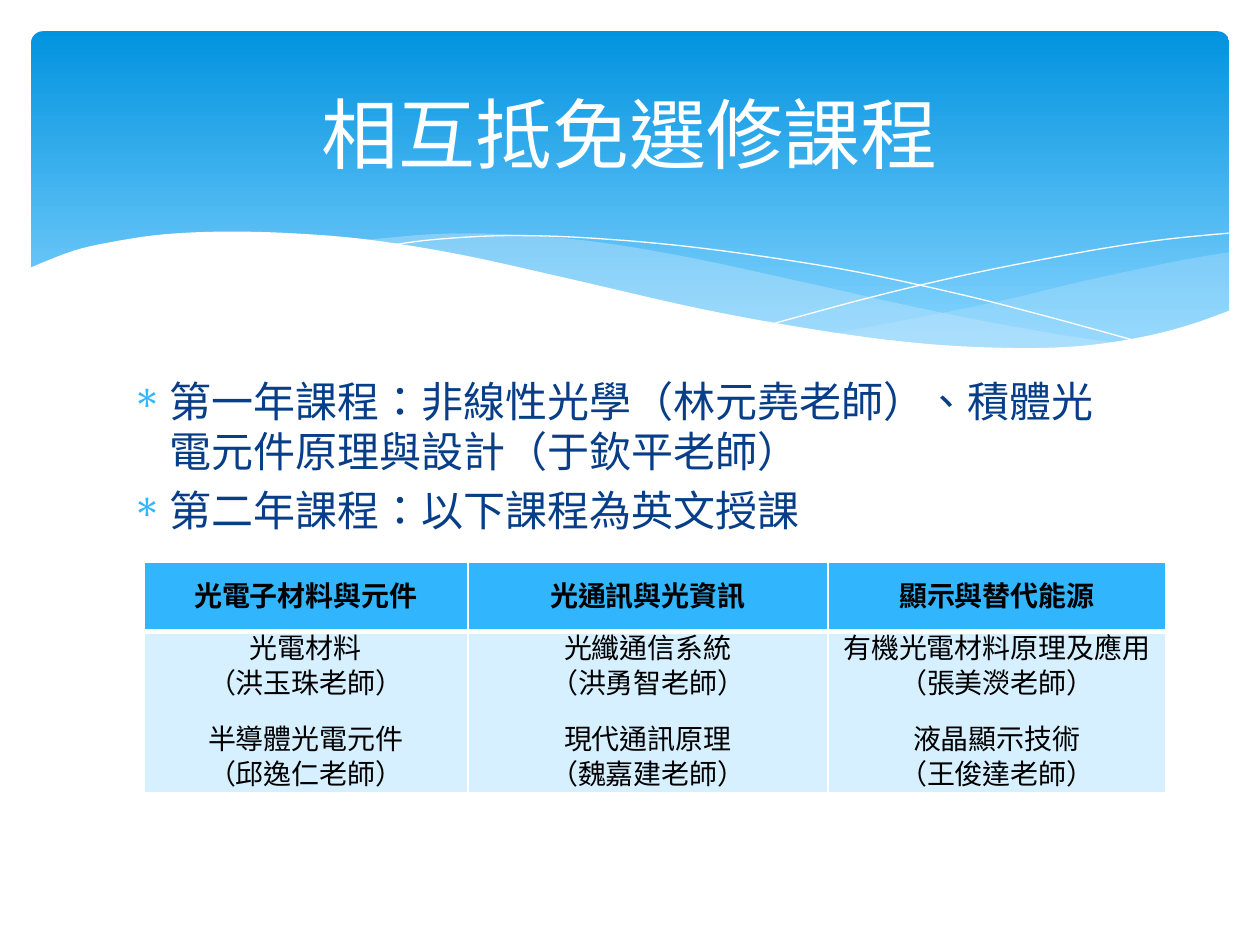
"""Build a slide on mutually creditable elective courses, with a wave banner and a course table."""
from collections import namedtuple
from lxml import etree
from pptx import Presentation
from pptx.dml.color import RGBColor
from pptx.enum.lang import MSO_LANGUAGE_ID
from pptx.enum.shapes import MSO_SHAPE
from pptx.enum.text import MSO_ANCHOR, PP_ALIGN
from pptx.oxml.ns import qn
from pptx.util import Cm, Pt

ROUNDED = MSO_SHAPE.ROUNDED_RECTANGLE
MIDDLE, TOP = MSO_ANCHOR.MIDDLE, MSO_ANCHOR.TOP
CENTER = PP_ALIGN.CENTER
CHINESE = MSO_LANGUAGE_ID.TRADITIONAL_CHINESE

Theme = namedtuple("Theme", "font white black navy accent pale wave sky_top sky_bottom title body cell")
theme = Theme("Calibri", "FFFFFF", "000000", "073E87", "31B6FD", "D6F0FF", "C6E7FC",
              "0293E0", "83D3FE", 44, 24, 16)


def smooth(points, steps=6):
    """Return points on a Catmull-Rom curve through the given points."""
    padded = [points[0], *points, points[-1]]
    curve = [points[0]]
    for a, b, c, d in zip(padded, padded[1:], padded[2:], padded[3:]):
        for step in range(1, steps + 1):
            t = step / steps
            curve.append(tuple(
                (2 * q + (r - p) * t + (2 * p - 5 * q + 4 * r - s) * t ** 2
                 + (3 * q - p - 3 * r + s) * t ** 3) / 2
                for p, q, r, s in zip(a, b, c, d)))
    return curve


def add_span(para, text, size, color, bold=False):
    """Add one formatted run to a paragraph."""
    span = para.add_run()
    span.text = text
    span.font.name = theme.font
    span.font.size = Pt(size)
    span.font.bold = bold
    span.font.color.rgb = RGBColor.from_string(color)
    span.font.language_id = CHINESE


deck = Presentation()
deck.slide_width, deck.slide_height = Cm(25.4), Cm(19.05)
page = deck.slides.add_slide(deck.slide_layouts[5])

banner = page.shapes.add_shape(ROUNDED, Cm(0.63), Cm(0.63), Cm(24.15), Cm(6.86))
banner.shadow.inherit = False
banner.adjustments[0] = 0.034
banner.line.fill.background()
banner.fill.gradient()
banner.fill.gradient_angle = 270
for stop, position, color in zip(banner.fill.gradient_stops, (0, 0.9), (theme.sky_top, theme.sky_bottom)):
    stop.position = position
    stop.color.rgb = RGBColor.from_string(color)

right_wave = smooth([(24.79, 5.08), (23.75, 5.26), (21.87, 5.66), (19.79, 6.15), (16.79, 6.73)]) + smooth(
    [(16.79, 6.73), (18.26, 6.91), (19.84, 7.04), (21.44, 7.04), (22.78, 6.86), (23.93, 6.58), (24.79, 6.27)])
middle_wave = smooth(
    [(7.26, 4.85), (8.74, 4.72), (10.13, 4.72), (11.81, 4.85), (13.74, 5.16), (15.98, 5.64),
     (18.82, 6.27), (21.26, 6.73), (22.68, 6.93)]) + smooth(
    [(22.68, 6.93), (21.54, 7.04), (20.22, 7.06), (18.69, 6.99), (16.89, 6.76), (14.83, 6.4),
     (12.47, 5.89), (10.26, 5.36), (8.69, 5.05), (7.26, 4.85)])
falling_line = smooth(
    [(7.85, 4.95), (8.74, 4.83), (10.19, 4.75), (11.91, 4.8), (14.12, 5), (16.89, 5.41),
     (19.3, 5.92), (21.11, 6.38), (23.04, 6.91)])
rising_line = smooth(
    [(15.57, 6.53), (17.65, 5.97), (19.71, 5.49), (22, 5.05), (23.47, 4.83), (24.77, 4.7)])
white_wave = smooth(
    [(24.82, 6.25), (23.88, 6.58), (22.83, 6.83), (21.59, 6.99), (20.14, 7.01), (18.44, 6.91),
     (16.46, 6.65), (14.1, 6.22), (11.35, 5.59), (9.27, 5.13), (7.42, 4.83), (5.84, 4.7),
     (4.5, 4.67), (3.35, 4.72), (2.41, 4.85), (1.5, 5.05), (0.58, 5.41)]) + [(0.58, 8.36), (24.82, 8.36)]

for outline, fill, opacity in (
        (right_wave, theme.wave, 29), (middle_wave, theme.wave, 40),
        (falling_line, None, 100), (rising_line, None, 100), (white_wave, theme.white, 100)):
    corners = [(Cm(x), Cm(y)) for x, y in outline]
    builder = page.shapes.build_freeform(*corners[0])
    builder.add_line_segments(corners[1:], close=fill is not None)
    wave = builder.convert_to_shape()
    wave.shadow.inherit = False
    if fill is None:
        wave.fill.background()
        wave.line.color.rgb = RGBColor.from_string(theme.white)
        wave.line.width = Pt(0)
        continue
    wave.line.fill.background()
    wave.fill.solid()
    wave.fill.fore_color.rgb = RGBColor.from_string(fill)
    if opacity < 100:
        tint = wave.fill._xPr.find(".//" + qn("a:srgbClr"))
        etree.SubElement(tint, qn("a:alpha")).set("val", str(opacity * 1000))

title = page.shapes.title
title.left, title.top, title.width, title.height = Cm(1.27), Cm(0.94), Cm(22.86), Cm(3.48)
title.text_frame.vertical_anchor = MIDDLE
title.text_frame.paragraphs[0].alignment = CENTER
add_span(title.text_frame.paragraphs[0], "相互抵免選修課程", theme.title, theme.white)
title._element.getparent().append(title._element)

box = page.shapes.add_textbox(Cm(2.41), Cm(7.44), Cm(20.57), Cm(9.58))
box.text_frame.word_wrap = True
for index, text in enumerate((
        "第一年課程：非線性光學（林元堯老師）、積體光電元件原理與設計（于欽平老師）",
        "第二年課程：以下課程為英文授課")):
    para = box.text_frame.add_paragraph() if index else box.text_frame.paragraphs[0]
    para.space_before = Pt(theme.body * 0.2)
    layout = para._p.get_or_add_pPr()
    layout.set("marL", str(Cm(0.76)))
    layout.set("indent", str(-Cm(0.76)))
    bullet_color = etree.SubElement(layout, qn("a:buClr"))
    etree.SubElement(bullet_color, qn("a:srgbClr")).set("val", theme.accent)
    etree.SubElement(layout, qn("a:buChar")).set("char", "∗")
    add_span(para, text, theme.body, theme.navy)

courses = (
    ("光電子材料與元件", ("光電材料", "（洪玉珠老師）", "半導體光電元件", "（邱逸仁老師）")),
    ("光通訊與光資訊", ("光纖通信系統", "（洪勇智老師）", "現代通訊原理", "（魏嘉建老師）")),
    ("顯示與替代能源", ("有機光電材料原理及應用", "（張美濙老師）", "液晶顯示技術", "（王俊達老師）")))
table = page.shapes.add_table(2, 3, Cm(2.9), Cm(11.33), Cm(20.6), Cm(4.65)).table
for column, width in zip(table.columns, (6.53, 7.26, 6.81)):
    column.width = Cm(width)
for row, height in zip(table.rows, (1.4, 3.25)):
    row.height = Cm(height)

for column, (field, lines) in enumerate(courses):
    for row, texts in enumerate(((field,), lines)):
        header = row == 0
        cell = table.cell(row, column)
        cell.margin_left = cell.margin_right = Cm(0.18)
        cell.margin_top = cell.margin_bottom = 0
        cell.vertical_anchor = MIDDLE if header else TOP
        for index, text in enumerate(texts):
            para = cell.text_frame.add_paragraph() if index else cell.text_frame.paragraphs[0]
            para.alignment = CENTER
            para.line_spacing = Pt(20)
            para.space_before = Pt(12 if index == 2 else 0)
            para.space_after = Pt(12 if header else 0)
            add_span(para, text, theme.cell, theme.black, bold=header)
        properties = cell._tc.get_or_add_tcPr()
        for side in "LRTB":
            thick = (header and side == "B") or (not header and side == "T")
            border = etree.SubElement(properties, qn("a:ln" + side))
            border.set("w", str(Pt(3 if thick else 1)))
            border_fill = etree.SubElement(border, qn("a:solidFill"))
            etree.SubElement(border_fill, qn("a:srgbClr")).set("val", theme.white)
        cell.fill.solid()
        cell.fill.fore_color.rgb = RGBColor.from_string(theme.accent if header else theme.pale)

deck.save("out.pptx")
